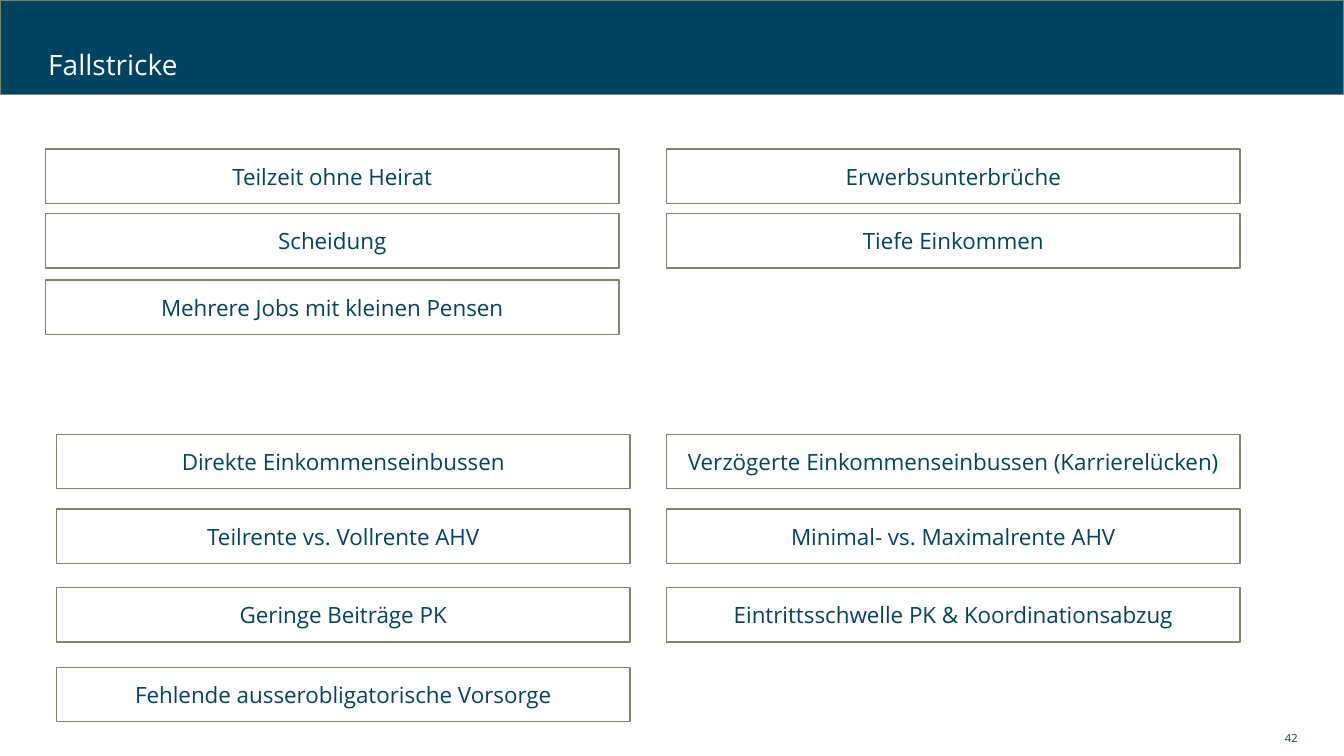
from pptx import Presentation
from pptx.dml.color import RGBColor
from pptx.enum.shapes import MSO_SHAPE as SHAPE
from pptx.enum.text import MSO_ANCHOR as ANCHOR, PP_ALIGN as ALIGN
from pptx.util import Inches, Pt

WIDTH, HEIGHT = 13.33, 7.5
FONT = "Open Sans"
NAVY, OLIVE, WHITE = "004460", "7A866C", "FFFFFF"
BOX_W, BOX_H = 5.69, 0.54
RIGHT_COL = 6.61

# Each group: left column, row tops, and the texts row by row
CAUSES = (0.45, (1.48, 2.12, 2.78), (
    ("Teilzeit ohne Heirat", "Erwerbsunterbrüche"),
    ("Scheidung", "Tiefe Einkommen"),
    ("Mehrere Jobs mit kleinen Pensen",),
))
CONSEQUENCES = (0.56, (4.31, 5.05, 5.83, 6.62), (
    ("Direkte Einkommenseinbussen",
     "Verzögerte Einkommenseinbussen (Karrierelücken)"),
    ("Teilrente vs. Vollrente AHV", "Minimal- vs. Maximalrente AHV"),
    ("Geringe Beiträge PK", "Eintrittsschwelle PK & Koordinationsabzug"),
    ("Fehlende ausserobligatorische Vorsorge",),
))


def rgb(value):
    return RGBColor.from_string(value)


def write(sp, text, size, color, align, spacing=1.0):
    tf = sp.text_frame
    frame = {"word_wrap": True, "vertical_anchor": ANCHOR.MIDDLE,
             "margin_top": Inches(0.05), "margin_bottom": Inches(0.05)}
    for name, value in frame.items():
        setattr(tf, name, value)
    p = tf.paragraphs[0]
    p.alignment, p.line_spacing = align, spacing
    r = p.add_run()
    r.text = text
    for name, value in {"name": FONT, "size": Pt(size)}.items():
        setattr(r.font, name, value)
    r.font.color.rgb = rgb(color)


def add_box(slide, x, y, w, h, fill):
    sp = slide.shapes.add_shape(SHAPE.RECTANGLE, *map(Inches, (x, y, w, h)))
    sp.shadow.inherit = False
    sp.fill.solid()
    sp.fill.fore_color.rgb = rgb(fill)
    sp.line.color.rgb = rgb(OLIVE)
    sp.line.width = Pt(1)
    return sp


def add_label(slide, x, y, w, h, *text_format):
    sp = slide.shapes.add_textbox(*map(Inches, (x, y, w, h)))
    write(sp, *text_format)


def add_group(slide, left, tops, rows):
    for top, texts in zip(tops, rows):
        for x, text in zip((left, RIGHT_COL), texts):
            sp = add_box(slide, x, top, BOX_W, BOX_H, WHITE)
            write(sp, text, 16, NAVY, ALIGN.CENTER)


def main():
    prs = Presentation()
    prs.slide_width, prs.slide_height = Inches(WIDTH), Inches(HEIGHT)
    slide = prs.slides.add_slide(prs.slide_layouts[6])
    add_box(slide, 0, 0, WIDTH, HEIGHT / 8, NAVY)
    add_label(slide, 0.38, 0.39, 11.02, 0.54,
              "Fallstricke", 20, WHITE, ALIGN.LEFT, 0.9)
    for group in (CAUSES, CONSEQUENCES):
        add_group(slide, *group)
    add_label(slide, 9.42, 7.2, 3.55, 0.24, "42", 8, NAVY, ALIGN.RIGHT)
    prs.save("out.pptx")


if __name__ == "__main__":
    main()
